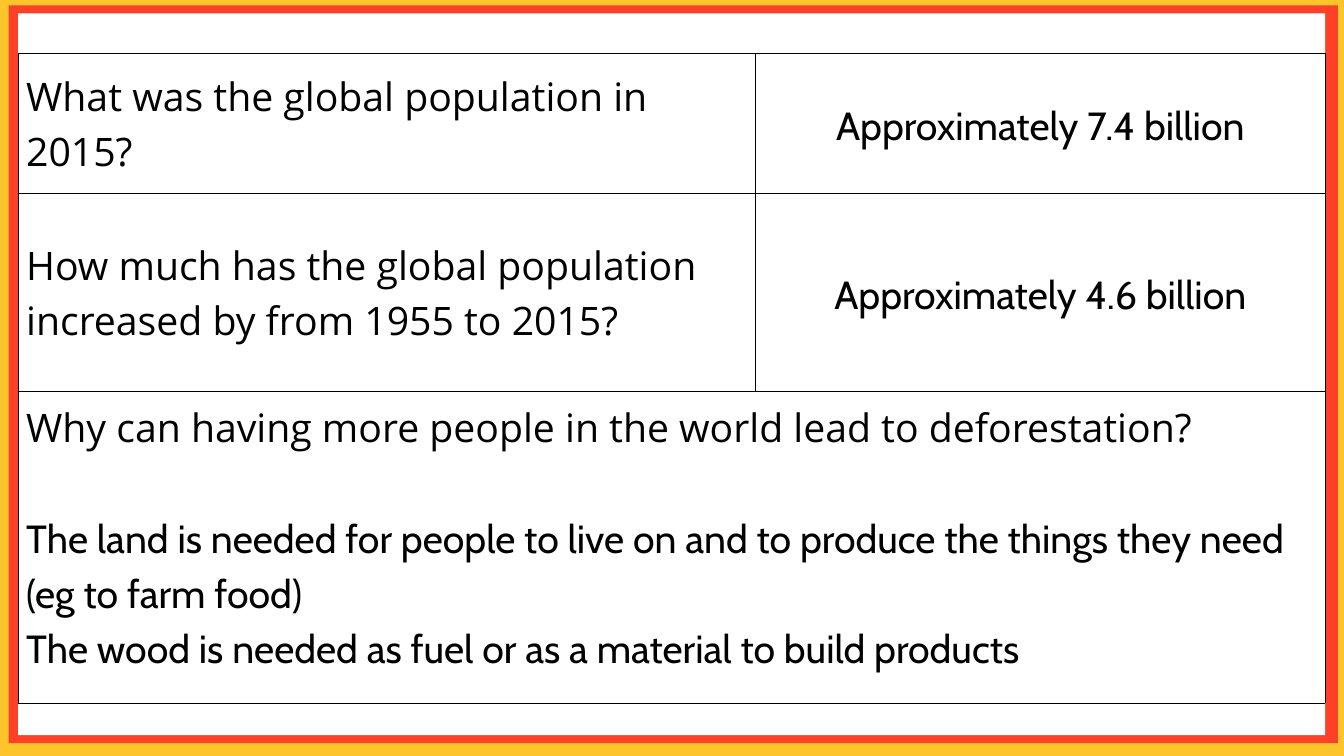
import pptx
import pptx.dml.color
import pptx.enum.shapes
import pptx.enum.text
import pptx.oxml
import pptx.util
from pptx.util import Inches

QUESTION_FONT = "Open Sans"
ANSWER_FONT = "Cabin"
LEADING = pptx.util.Pt(58.8)
BORDER = (
    '<a:{side} xmlns:a="http://schemas.openxmlformats.org/drawingml/2006/main" w="9525">'
    '<a:solidFill><a:srgbClr val="000000"/></a:solidFill></a:{side}>'
)


def color(hex_string):
    return pptx.dml.color.RGBColor.from_string(hex_string)


def fill_cell(cell, paragraphs, anchor, align):
    """Write (text, font, space before) paragraphs into a bordered cell."""
    cell.fill.background()
    cell.vertical_anchor = anchor
    cell.margin_left = cell.margin_right = Inches(0.12)
    cell.margin_top = cell.margin_bottom = Inches(0.12)
    for index, (text, font, gap) in enumerate(paragraphs):
        frame = cell.text_frame
        paragraph = frame.paragraphs[0] if index == 0 else frame.add_paragraph()
        paragraph.alignment = align
        paragraph.line_spacing = LEADING
        paragraph.space_before = gap
        run = paragraph.add_run()
        run.text = text
        run.font.name = font
        run.font.size = pptx.util.Pt(42)
        run.font.color.rgb = color("000000")


deck = pptx.Presentation()
deck.slide_width = Inches(20)
deck.slide_height = Inches(11.25)
slide = deck.slides.add_slide(deck.slide_layouts[6])
slide.background.fill.solid()
slide.background.fill.fore_color.rgb = color("FDC42C")

# Red frame and white page
for left, top, width, height, fill in [
    (0.13, 0.08, 19.78, 10.98, "FD4128"),
    (0.27, 0.2, 19.45, 10.74, "FFFFFF"),
]:
    panel = slide.shapes.add_shape(
        pptx.enum.shapes.MSO_SHAPE.RECTANGLE,
        Inches(left), Inches(top), Inches(width), Inches(height),
    )
    panel.shadow.inherit = False
    panel.fill.solid()
    panel.fill.fore_color.rgb = color(fill)
    panel.line.fill.background()

# Question grid
quiz = slide.shapes.add_table(
    3, 2, Inches(0.27), Inches(0.79), Inches(19.45), Inches(9.67)
).table
quiz.first_row = False
quiz.horz_banding = False
for column, width in zip(quiz.columns, (10.97, 8.48)):
    column.width = Inches(width)
for row, height in zip(quiz.rows, (2.09, 2.94, 4.64)):
    row.height = Inches(height)
quiz.cell(2, 0).merge(quiz.cell(2, 1))

# Short questions with their answers
middle = pptx.enum.text.MSO_ANCHOR.MIDDLE
left_align = pptx.enum.text.PP_ALIGN.LEFT
center = pptx.enum.text.PP_ALIGN.CENTER
for row, (question, answer) in enumerate([
    ("What was the global population in 2015?", "Approximately 7.4 billion"),
    ("How much has the global population increased by from 1955 to 2015?",
     "Approximately 4.6 billion"),
]):
    fill_cell(quiz.cell(row, 0), [(question, QUESTION_FONT, 0)], middle, left_align)
    fill_cell(quiz.cell(row, 1), [(answer, ANSWER_FONT, 0)], middle, center)

# Long question across both columns
fill_cell(
    quiz.cell(2, 0),
    [
        ("Why can having more people in the world lead to deforestation?",
         QUESTION_FONT, 0),
        ("The land is needed for people to live on and to produce the things "
         "they need (eg to farm food)", ANSWER_FONT, LEADING),
        ("The wood is needed as fuel or as a material to build products",
         ANSWER_FONT, 0),
    ],
    pptx.enum.text.MSO_ANCHOR.TOP,
    left_align,
)
quiz.cell(2, 1).fill.background()

# Cell borders
for cell in quiz.iter_cells():
    properties = cell._tc.get_or_add_tcPr()
    for position, side in enumerate(("lnL", "lnR", "lnT", "lnB")):
        properties.insert(position, pptx.oxml.parse_xml(BORDER.format(side=side)))

deck.save("out.pptx")
